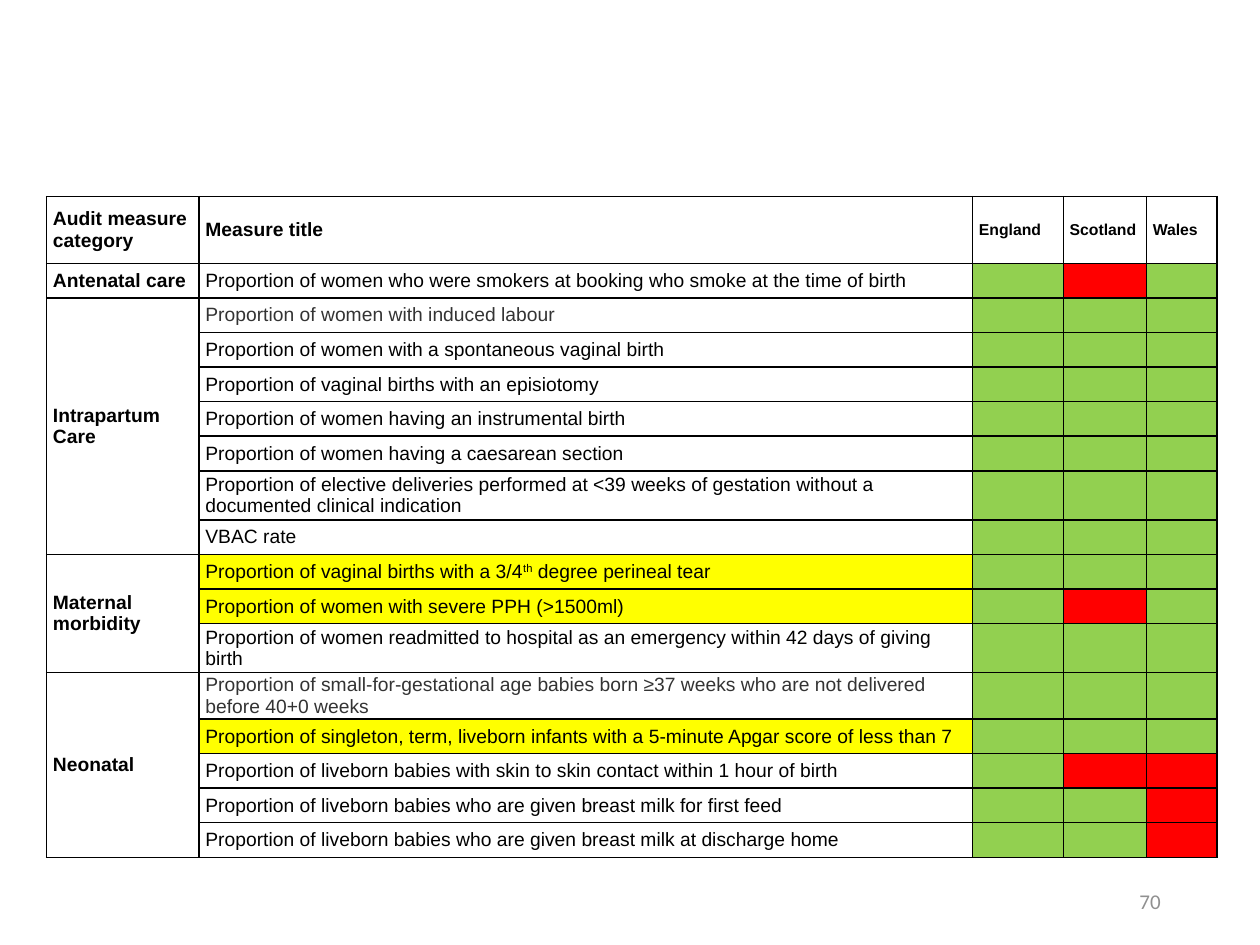
from lxml import etree
from pptx import Presentation
from pptx import util as u
from pptx.dml.color import RGBColor
from pptx.enum import text
from pptx.oxml import ns

BLACK = RGBColor(0x00, 0x00, 0x00)
CHARCOAL = RGBColor(0x33, 0x33, 0x33)
GREY = RGBColor(0x90, 0x90, 0x90)
GREEN = RGBColor(0x92, 0xD0, 0x50)
RED = RGBColor(0xFF, 0x00, 0x00)
YELLOW = RGBColor(0xFF, 0xFF, 0x00)

MARKS = {"G": GREEN, "R": RED}
HEADINGS = ["Audit measure category", "Measure title", "England", "Scotland", "Wales"]

# Each measure: title, marks for the three nations, text colour, highlight
AUDIT = {
    "Antenatal care": [
        ("Proportion of women who were smokers at booking who smoke at the time of birth",
         "GRG", BLACK, None),
    ],
    "Intrapartum Care": [
        ("Proportion of women with induced labour", "GGG", CHARCOAL, None),
        ("Proportion of women with a spontaneous vaginal birth", "GGG", BLACK, None),
        ("Proportion of vaginal births with an episiotomy", "GGG", BLACK, None),
        ("Proportion of women having an instrumental birth", "GGG", BLACK, None),
        ("Proportion of women having a caesarean section", "GGG", BLACK, None),
        ("Proportion of elective deliveries performed at <39 weeks of gestation "
         "without a documented clinical indication", "GGG", BLACK, None),
        ("VBAC rate", "GGG", BLACK, None),
    ],
    "Maternal morbidity": [
        ("Proportion of vaginal births with a 3/4^th^ degree perineal tear",
         "GGG", BLACK, YELLOW),
        ("Proportion of women with severe PPH (>1500ml)", "GRG", BLACK, YELLOW),
        ("Proportion of women readmitted to hospital as an emergency within 42 days "
         "of giving birth", "GGG", BLACK, None),
    ],
    "Neonatal": [
        ("Proportion of small-for-gestational age babies born ≥37 weeks who are not "
         "delivered before 40+0 weeks", "GGG", CHARCOAL, None),
        ("Proportion of singleton, term, liveborn infants with a 5-minute Apgar score "
         "of less than 7", "GGG", BLACK, YELLOW),
        ("Proportion of liveborn babies with skin to skin contact within 1 hour of birth",
         "GRR", BLACK, None),
        ("Proportion of liveborn babies who are given breast milk for first feed",
         "GGR", BLACK, None),
        ("Proportion of liveborn babies who are given breast milk at discharge home",
         "GGR", BLACK, None),
    ],
}

COLUMN_WIDTHS = [1.21, 6.14, 0.72, 0.66, 0.56]
TABLE_HEIGHT = 5.22
TALL_ROWS = {0: 0.53, 7: 0.39, 11: 0.39, 12: 0.34}


class AuditPage:
    font_name = "Arial"
    size = 11
    border = u.Pt(1)

    def __init__(self, page):
        self.page = page

    def add_number(self, number):
        box = self.page.shapes.add_textbox(
            u.Inches(7.06), u.Inches(6.95), u.Inches(2.25), u.Inches(0.4))
        frame = box.text_frame
        frame.word_wrap = True
        frame.vertical_anchor = text.MSO_ANCHOR.MIDDLE
        frame.text = number
        para = frame.paragraphs[0]
        para.alignment = text.PP_ALIGN.RIGHT
        font = para.runs[0].font
        font.name, font.size, font.color.rgb = "Calibri", u.Pt(12), GREY

    def add_grid(self, row_count):
        """Add an empty bordered table whose plain rows share the spare height."""
        table = self.page.shapes.add_table(
            row_count, len(COLUMN_WIDTHS), u.Inches(0.37), u.Inches(1.56),
            u.Inches(sum(COLUMN_WIDTHS)), u.Inches(TABLE_HEIGHT)).table
        table.first_row = table.horz_banding = False
        for column, width in zip(table.columns, COLUMN_WIDTHS):
            column.width = u.Inches(width)
        plain = (TABLE_HEIGHT - sum(TALL_ROWS.values())) / (row_count - len(TALL_ROWS))
        for index, row in enumerate(table.rows):
            row.height = u.Inches(TALL_ROWS.get(index, plain))
        for cell in table.iter_cells():
            self.style_cell(cell)
        return table

    def style_cell(self, cell):
        cell.margin_left = cell.margin_right = u.Inches(0.05)
        cell.margin_top = cell.margin_bottom = 0
        cell.vertical_anchor = text.MSO_ANCHOR.MIDDLE
        properties = cell._tc.get_or_add_tcPr()
        for side in ("lnL", "lnR", "lnT", "lnB"):
            line = etree.SubElement(properties, ns.qn(f"a:{side}"), w=str(self.border))
            solid = etree.SubElement(line, ns.qn("a:solidFill"))
            etree.SubElement(solid, ns.qn("a:srgbClr"), val=str(BLACK))
        cell.fill.background()
        # Keeps cells without text from stretching their row
        para = cell.text_frame.paragraphs[0]
        etree.SubElement(para._p, ns.qn("a:endParaRPr"), sz=str(self.size * 100))

    def fill_cell(self, cell, color):
        cell.fill.solid()
        cell.fill.fore_color.rgb = color

    def write_cell(self, cell, words, size=size, bold=False, color=BLACK):
        """Write words, raising any part set between carets."""
        para = cell.text_frame.paragraphs[0]
        for index, part in enumerate(words.split("^")):
            span = para.add_run()
            span.text = part
            font = span.font
            font.name, font.size, font.bold = self.font_name, u.Pt(size), bold
            font.color.rgb = color
            if index % 2:
                span._r.get_or_add_rPr().set("baseline", "30000")

    def add_audit_table(self):
        table = self.add_grid(1 + sum(len(measures) for measures in AUDIT.values()))
        for column, heading in enumerate(HEADINGS):
            self.write_cell(table.cell(0, column), heading,
                            size=self.size if column < 2 else 9, bold=True)
        row = 1
        for category, measures in AUDIT.items():
            category_cell = table.cell(row, 0)
            if len(measures) > 1:
                category_cell.merge(table.cell(row + len(measures) - 1, 0))
            self.write_cell(category_cell, category, bold=True)
            for title, marks, color, highlight in measures:
                title_cell = table.cell(row, 1)
                self.write_cell(title_cell, title, color=color)
                if highlight:
                    self.fill_cell(title_cell, highlight)
                for column, mark in enumerate(marks, start=2):
                    self.fill_cell(table.cell(row, column), MARKS[mark])
                row += 1


def main():
    deck = Presentation()
    deck.slide_width, deck.slide_height = u.Inches(10), u.Inches(7.5)
    audit = AuditPage(deck.slides.add_slide(deck.slide_layouts[6]))
    audit.add_number("70")
    audit.add_audit_table()
    deck.save("out.pptx")


if __name__ == "__main__":
    main()
